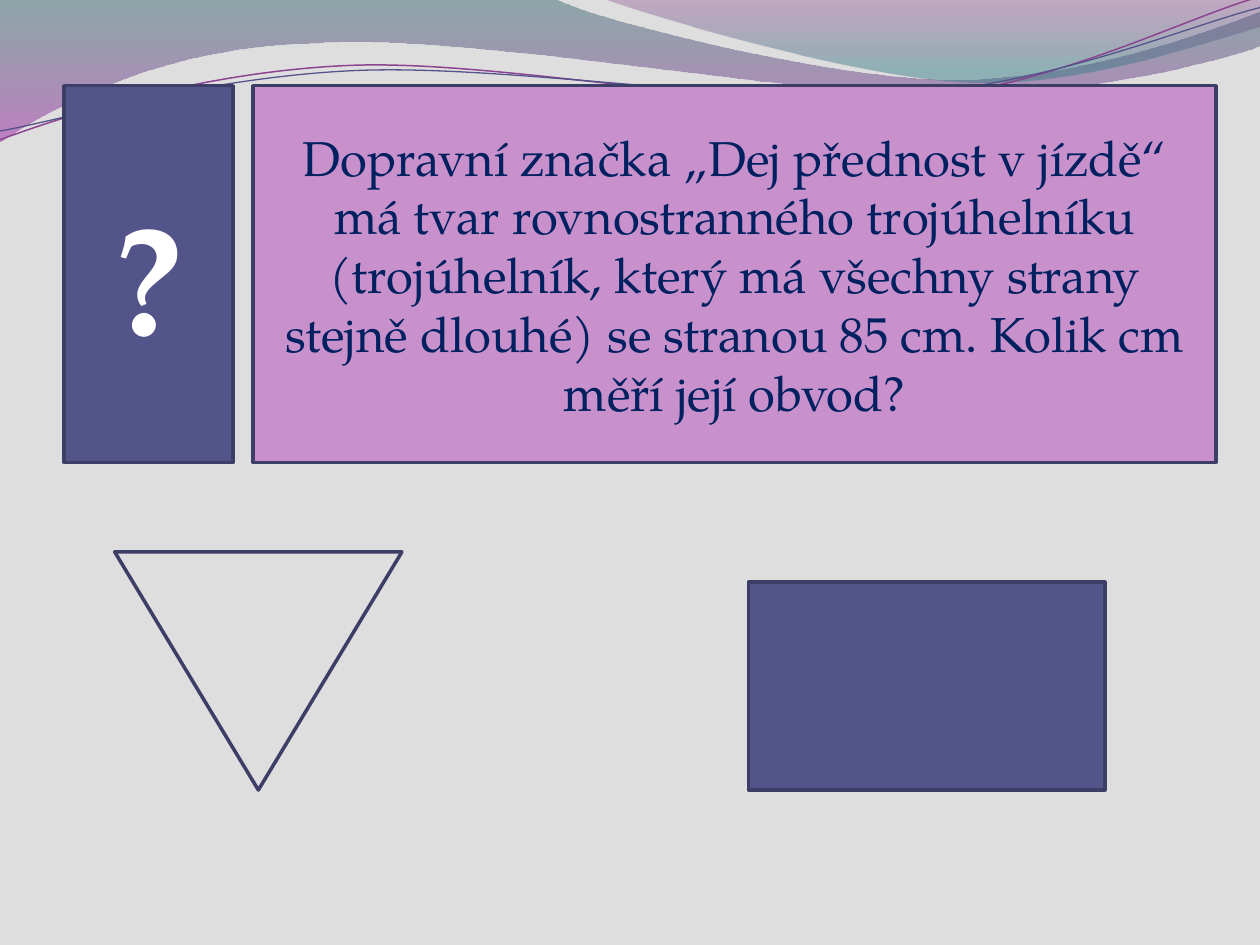
from pptx import Presentation
from pptx.dml.color import RGBColor
from pptx.enum.shapes import MSO_SHAPE
from pptx.enum.text import MSO_ANCHOR, PP_ALIGN
from pptx.oxml.ns import qn
from pptx.util import Inches, Pt
from lxml import etree

RECT, TRI = MSO_SHAPE.RECTANGLE, MSO_SHAPE.ISOSCELES_TRIANGLE
MIDDLE, CENTER = MSO_ANCHOR.MIDDLE, PP_ALIGN.CENTER
FONT = "TeX Gyre Pagella"
GREY = RGBColor(0xDE, 0xDE, 0xDE)
INDIGO = RGBColor(0x53, 0x54, 0x8A)
EDGE = RGBColor(0x3D, 0x3E, 0x66)
PINK = RGBColor(0xC9, 0x91, 0xCB)
NAVY = RGBColor(0x00, 0x20, 0x60)
WHITE = RGBColor(0xFF, 0xFF, 0xFF)
PLUM = RGBColor(0x8D, 0x44, 0x90)
TEAL = RGBColor(0x2D, 0x63, 0x68)
VIOLET = RGBColor(0xA5, 0x30, 0xA9)
GRAPE = RGBColor(0x7F, 0x2F, 0x82)
AQUA = RGBColor(0x2F, 0x7B, 0x82)

# Path steps in inches: two values are a line's end, six are a cubic curve.
# Gradient stops: position, colour, opacity in percent.
WAVES = [
    ([(0, 0), (4.4, -0.01), (4.76, 0.17, 6.64, 0.63, 7.58, 0.63),
      (8.53, 0.63, 9.58, 0.26, 10, 0.09), (10.01, 0.36),
      (9.83, 0.44, 8.7, 0.76, 7.46, 0.75), (6.22, 0.75, 3.82, 0.28, 2.57, 0.34),
      (1.29, 0.36, 0.46, 0.83, -0.01, 1.13)],
     [(0, TEAL, 45), (1, VIOLET, 55)]),
    ([(4.79, -0.01), (5.09, 0.11, 6.82, 0.62, 7.69, 0.65),
      (8.56, 0.69, 9.61, 0.32, 10, 0.21), (10, 0)],
     [(0, GRAPE, 30), (0.8, AQUA, 45)]),
]
STRANDS = [
    ([(0, 1.11), (0.48, 0.93, 1.58, 0.57, 2.77, 0.52),
      (3.95, 0.47, 5.93, 0.89, 7.13, 0.8), (8.33, 0.71, 9.38, 0.15, 9.98, -0.02)],
     PLUM, 0.85),
    ([(0, 1.04), (0.47, 0.96, 1.64, 0.61, 2.83, 0.56),
      (4.03, 0.51, 5.97, 0.84, 7.17, 0.75), (8.36, 0.67, 9.41, 0.21, 10, 0.06)],
     INDIGO, 0.75),
]
TASK = ("Dopravní značka „Dej přednost v jízdě“ má tvar rovnostranného "
        "trojúhelníku (trojúhelník, který má všechny strany stejně dlouhé) "
        "se stranou 85 cm. Kolik cm měří její obvod?")
# Kind, box, fill, rotation, text, font format, font colour
FORMS = [
    (RECT, (0.51, 0.68, 1.34, 2.99), INDIGO, 0, "?",
     {"size": Pt(88), "bold": True}, WHITE),
    (RECT, (2.01, 0.68, 7.64, 2.99), PINK, 0, TASK, {"size": Pt(28)}, NAVY),
    (TRI, (0.91, 4.38, 2.28, 1.89), None, 180, "", {}, None),
    (RECT, (5.94, 4.62, 2.83, 1.65), INDIGO, 0, "", {}, None),
]


def draw(slide, path, close):
    """Lay all points as straight steps, then join each curve's three."""
    points = [(Inches(step[i]), Inches(step[i + 1]))
              for step in path for i in range(0, len(step), 2)]
    pen = slide.shapes.build_freeform(*points[0])
    pen.add_line_segments(points[1:], close=close)
    shape = pen.convert_to_shape()
    shape.shadow.inherit = False
    lines = iter(list(shape._element.spPr.iter(qn("a:lnTo"))))
    for step in path[1:]:
        first = next(lines)
        if len(step) == 6:
            first.tag = qn("a:cubicBezTo")
            for _ in range(2):
                line = next(lines)
                first.append(line[0])
                line.getparent().remove(line)
    return shape


def shade(shape, stops):
    """Fill from top to bottom with partly clear colours."""
    shape.line.fill.background()
    shape.fill.gradient()
    shape.fill.gradient_angle = 270
    for stop, (pos, color, _) in zip(shape.fill.gradient_stops, stops):
        stop.position, stop.color.rgb = pos, color
    tints = shape._element.spPr.iter(qn("a:srgbClr"))
    for tint, (_, _, clear) in zip(list(tints), stops):
        etree.SubElement(tint, qn("a:alpha")).set("val", str(clear * 1000))


def outline(shape, color, width):
    shape.line.color.rgb = color
    shape.line.width = Pt(width)


def add_form(slide, kind, box, fill, turn, text, style, color):
    shape = slide.shapes.add_shape(kind, *map(Inches, box))
    shape.shadow.inherit = False
    shape.rotation = turn
    outline(shape, EDGE, 2)
    if fill is None:
        shape.fill.background()
    else:
        shape.fill.solid()
        shape.fill.fore_color.rgb = fill
    if not text:
        return
    frame = shape.text_frame
    frame.word_wrap = True
    frame.vertical_anchor = MIDDLE
    para = frame.paragraphs[0]
    para.alignment = CENTER
    run = para.add_run()
    run.text = text
    for name, value in {"name": FONT, **style}.items():
        setattr(run.font, name, value)
    run.font.color.rgb = color


def main():
    deck = Presentation()
    deck.slide_width, deck.slide_height = Inches(10), Inches(7.5)
    slide = deck.slides.add_slide(deck.slide_layouts[6])
    slide.background.fill.solid()
    slide.background.fill.fore_color.rgb = GREY
    for path, stops in WAVES:
        shade(draw(slide, path, True), stops)
    for path, color, width in STRANDS:
        strand = draw(slide, path, False)
        strand.fill.background()
        outline(strand, color, width)
    for form in FORMS:
        add_form(slide, *form)
    deck.save("out.pptx")


if __name__ == "__main__":
    main()
